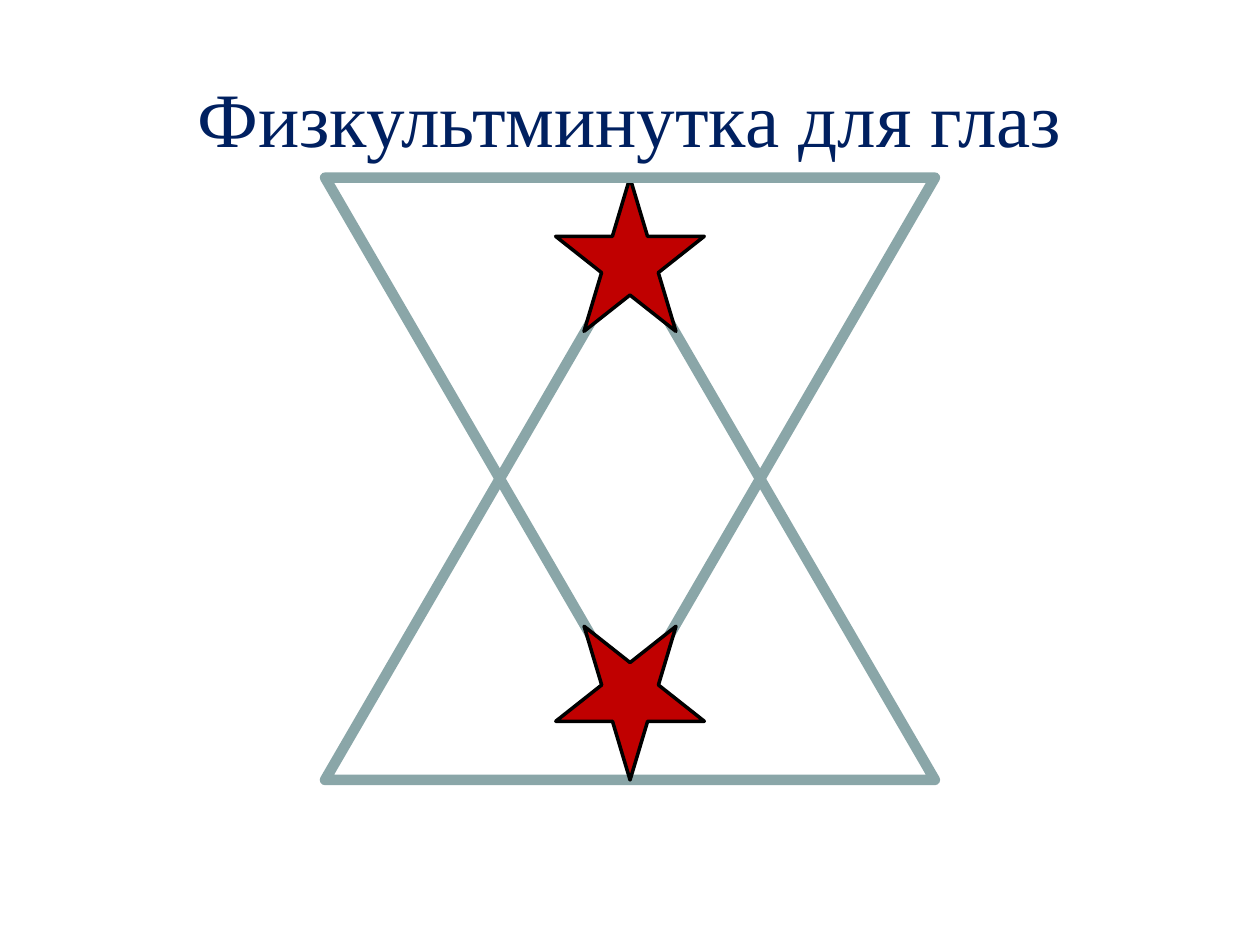
"""Build the eye exercise slide with two triangles and two stars."""
import pptx
import pptx.util
import pptx.dml.color
import pptx.enum.shapes
import pptx.enum.text
import lxml.etree
import pptx.oxml.ns

Inches = pptx.util.Inches
Pt = pptx.util.Pt
KIND = pptx.enum.shapes.MSO_SHAPE


def paint(part, color):
    part.solid()
    part.fore_color.rgb = pptx.dml.color.RGBColor.from_string(color)


deck = pptx.Presentation()
deck.slide_width, deck.slide_height = Inches(10), Inches(7.5)
slide = deck.slides.add_slide(deck.slide_layouts[6])

title = slide.shapes.add_textbox(Inches(0.5), Inches(0.3), Inches(9), Inches(1.25))
frame = title.text_frame
frame.word_wrap = True
frame.vertical_anchor = pptx.enum.text.MSO_ANCHOR.MIDDLE
para = frame.paragraphs[0]
para.text = "Физкультминутка для глаз"
para.alignment = pptx.enum.text.PP_ALIGN.CENTER
para.font.size = Pt(44)
para.font.name = "Times New Roman"
paint(para.font.fill, "002060")

triangle = (KIND.ISOSCELES_TRIANGLE, 4.84, 4.17, None, "8AA6A8", 6)
star = (KIND.STAR_5_POINT, 1.18, 1.22, "C00000", "000000", 2)
figures = [(triangle, 2.02, 0), (star, 1.41, 0), (triangle, 1.41, 180), (star, 4.97, 180)]

for (kind, width, height, fill, edge, weight), top, turn in figures:
    shape = slide.shapes.add_shape(
        kind, Inches(5 - width / 2), Inches(top), Inches(width), Inches(height))
    shape.shadow.inherit = False
    shape.rotation = turn
    if fill:
        paint(shape.fill, fill)
    else:
        shape.fill.background()
    paint(shape.line.fill, edge)
    shape.line.width = Pt(weight)
    outline = shape.line.fill._xPr.find(pptx.oxml.ns.qn("a:ln"))
    if outline is None:
        outline = shape.line.fill._xPr
    lxml.etree.SubElement(outline, pptx.oxml.ns.qn("a:round"))

deck.save("out.pptx")
